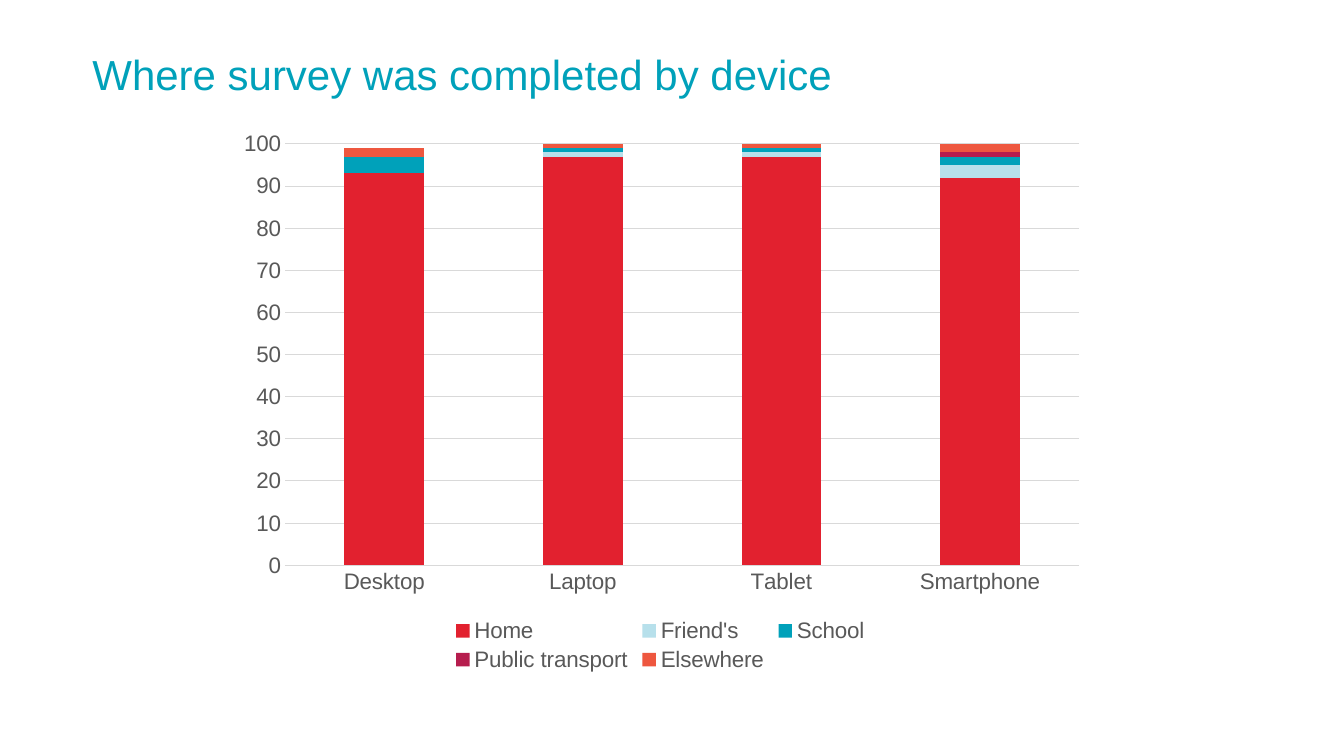
from lxml.etree import SubElement
from pptx import Presentation
from pptx.chart.data import CategoryChartData
from pptx.dml.color import RGBColor
from pptx.enum.chart import XL_CHART_TYPE, XL_LEGEND_POSITION, XL_TICK_MARK
from pptx.enum.text import MSO_ANCHOR, MSO_AUTO_SIZE, PP_ALIGN
from pptx.oxml.ns import qn
from pptx.util import Cm, Pt

FONT = "Arial"
COLOURS = {
    "title": "00A1BA",
    "label": "595959",
    "grid": "D9D9D9",
    "Home": "E2212F",
    "Friend's": "B7E0EB",
    "School": "00A1BA",
    "Public transport": "B61D4E",
    "Elsewhere": "EE573F",
}
DEVICES = ["Desktop", "Laptop", "Tablet", "Smartphone"]
PLACES = {
    "Home": [93, 97, 97, 92],
    "Friend's": [0, 1, 1, 3],
    "School": [4, 1, 1, 2],
    "Public transport": [0, 0, 0, 1],
    "Elsewhere": [2, 1, 2, 2],
}


def colour(name):
    return RGBColor.from_string(COLOURS[name])


def style_font(font, size, colour_name):
    font.name = FONT
    font.size = Pt(size)
    font.bold = False
    font.color.rgb = colour(colour_name)


def style_line(line):
    line.color.rgb = colour("grid")
    line.width = Pt(0.75)


def set_title(slide, text):
    title = slide.shapes.title
    title.left, title.top = Cm(2.33), Cm(1.37)
    title.width, title.height = Cm(29.21), Cm(2.21)
    frame = title.text_frame
    frame.margin_left = frame.margin_right = Cm(0)
    frame.margin_top = frame.margin_bottom = Cm(0)
    frame.vertical_anchor = MSO_ANCHOR.TOP
    frame.auto_size = MSO_AUTO_SIZE.NONE
    frame.word_wrap = True
    paragraph = frame.paragraphs[0]
    paragraph.alignment = PP_ALIGN.LEFT
    paragraph.line_spacing = 0.9
    run = paragraph.add_run()
    run.text = text
    style_font(run.font, 30, "title")


def style_axes(chart):
    for axis in (chart.category_axis, chart.value_axis):
        axis.major_tick_mark = XL_TICK_MARK.NONE
        axis.minor_tick_mark = XL_TICK_MARK.NONE
        style_font(axis.tick_labels.font, 16, "label")
    style_line(chart.category_axis.format.line)
    value_axis = chart.value_axis
    value_axis.minimum_scale = 0
    value_axis.maximum_scale = 100
    value_axis.major_unit = 10
    value_axis.format.line.fill.background()
    value_axis.has_major_gridlines = True
    style_line(value_axis.major_gridlines.format.line)


def add_legend(chart):
    chart.has_legend = True
    legend = chart.legend
    legend.position = XL_LEGEND_POSITION.BOTTOM
    legend.include_in_layout = False
    style_font(legend.font, 16, "label")


def set_plot_area(chart, **fractions):
    """Place the inner plot area by fractions of the chart's size."""
    plot_area = chart.plots[0]._element.getparent()
    layout = plot_area.find(qn("c:layout"))
    if layout is None:
        layout = SubElement(plot_area, qn("c:layout"))
        plot_area.insert(0, layout)
    manual = SubElement(layout, qn("c:manualLayout"))
    settings = {"layoutTarget": "inner", "xMode": "edge", "yMode": "edge", **fractions}
    for name, value in settings.items():
        SubElement(manual, qn(f"c:{name}")).set("val", str(value))


def add_stacked_chart(slide, categories, series_values):
    data = CategoryChartData(number_format="0")
    data.categories = categories
    for name, values in series_values.items():
        data.add_series(name, values)
    frame = slide.shapes.add_chart(
        XL_CHART_TYPE.COLUMN_STACKED, Cm(5.64), Cm(3.07), Cm(22), Cm(13.97), data
    )
    chart = frame.chart
    chart.has_title = False
    chart.font.name = FONT
    chart.font.size = Pt(10)
    plot = chart.plots[0]
    plot.gap_width = 150
    plot.overlap = 100
    plot.vary_by_categories = False
    for series in plot.series:
        series.invert_if_negative = False
        series.format.fill.solid()
        series.format.fill.fore_color.rgb = colour(series.name)
    style_axes(chart)
    add_legend(chart)
    set_plot_area(chart, x=0.07, y=0.04, w=0.91, h=0.76)


def main():
    presentation = Presentation()
    presentation.slide_width = Cm(33.87)
    presentation.slide_height = Cm(19.05)
    slide = presentation.slides.add_slide(presentation.slide_layouts[5])
    set_title(slide, "Where survey was completed by device")
    add_stacked_chart(slide, DEVICES, PLACES)
    presentation.save("out.pptx")


if __name__ == "__main__":
    main()
